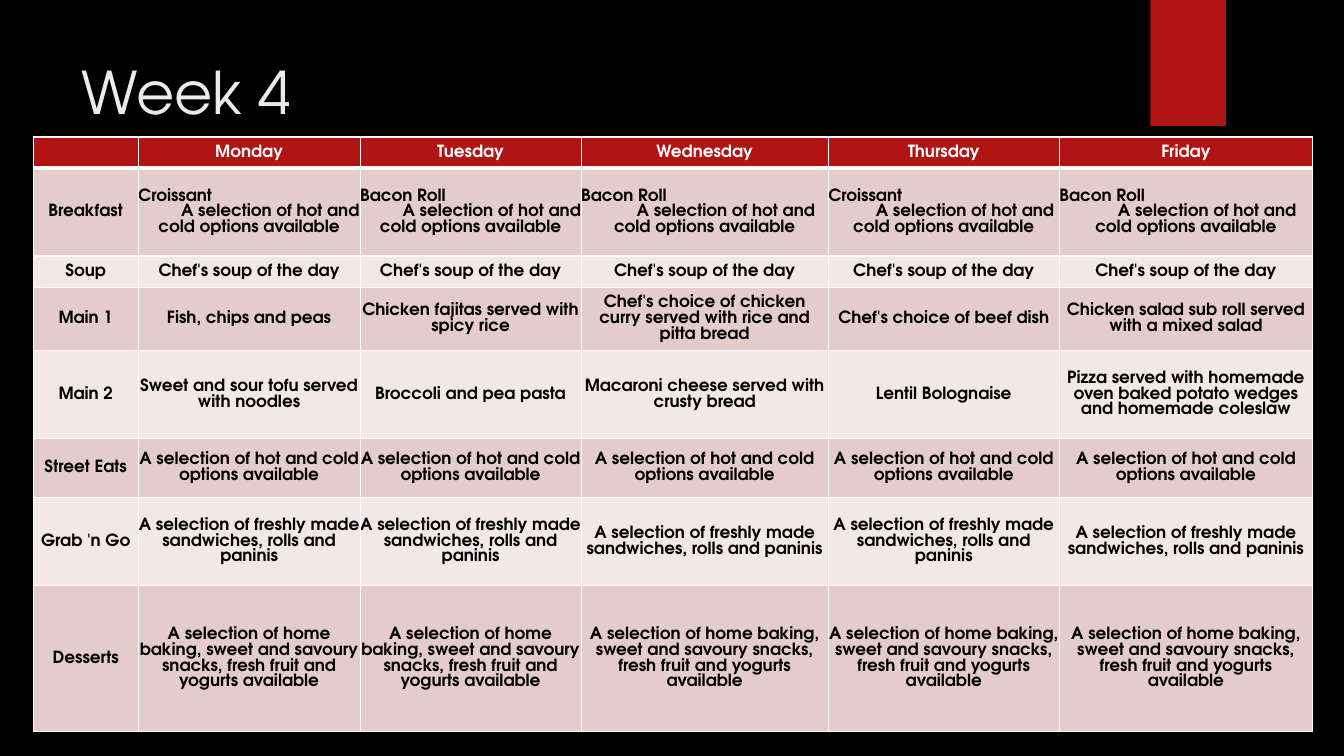
from dataclasses import dataclass

from lxml import etree
from pptx import Presentation
from pptx.dml.color import RGBColor
from pptx.enum.shapes import MSO_SHAPE
from pptx.enum.text import MSO_ANCHOR, PP_ALIGN
from pptx.oxml.ns import qn
from pptx.util import Inches, Pt

RECTANGLE = MSO_SHAPE.RECTANGLE
LEFT, CENTER = PP_ALIGN.LEFT, PP_ALIGN.CENTER
TOP, MIDDLE = MSO_ANCHOR.TOP, MSO_ANCHOR.MIDDLE


@dataclass(frozen=True)
class Theme:
    background: str = "000000"
    accent: str = "B01513"
    title: str = "EBEBEB"
    light: str = "FFFFFF"
    dark: str = "000000"
    bands: tuple = ("E4CCCC", "F2E8E7")
    font: str = "TeX Gyre Adventor"
    title_size: float = 42
    title_leading: float = 51
    table_size: float = 12
    table_leading: float = 11.2
    rule: float = 1
    header_rule: float = 3


THEME = Theme()
SLIDE_WIDTH, SLIDE_HEIGHT = 13.33, 7.5
TITLE_BOX = (0.71, 0.5, 10.29, 1.53)
TAB_BOX = (11.41, 0, 0.75, 1.25)
MENU_BOX = (0.33, 1.36, 12.69, 5.9)
COLUMN_WIDTHS = (1.04, 2.2, 2.19, 2.45, 2.29, 2.51)
ROW_HEIGHTS = (0.31, 0.87, 0.31, 0.63, 0.87, 0.59, 0.87, 1.45)
BREAKFAST_INDENT = 0.42

DAYS = ("Monday", "Tuesday", "Wednesday", "Thursday", "Friday")
HOT_AND_COLD = "A selection of hot and cold options available"
BREAKFASTS = ("Croissant", "Bacon Roll", "Bacon Roll", "Croissant", "Bacon Roll")
MENU = (
    ("", *DAYS),
    ("Breakfast", *((dish, HOT_AND_COLD) for dish in BREAKFASTS)),
    ("Soup", *["Chef's soup of the day"] * len(DAYS)),
    (
        "Main 1",
        "Fish, chips and peas",
        "Chicken fajitas served with spicy rice",
        "Chef's choice of chicken curry served with rice and pitta bread",
        "Chef's choice of beef dish",
        "Chicken salad sub roll served with a mixed salad",
    ),
    (
        "Main 2",
        "Sweet and sour tofu served with noodles",
        "Broccoli and pea pasta",
        "Macaroni cheese served with crusty bread",
        "Lentil Bolognaise",
        "Pizza served with homemade oven baked potato wedges and homemade coleslaw",
    ),
    ("Street Eats", *[HOT_AND_COLD] * len(DAYS)),
    ("Grab 'n Go", *["A selection of freshly made sandwiches, rolls and paninis"] * len(DAYS)),
    (
        "Desserts",
        *["A selection of home baking, sweet and savoury snacks, "
          "fresh fruit and yogurts available"] * len(DAYS),
    ),
)


def write_text(paragraph, text, *, size, leading, color, bold=False, align=LEFT, indent=0):
    if indent:
        paragraph._p.get_or_add_pPr().set("indent", str(Inches(indent)))
    paragraph.alignment = align
    paragraph.line_spacing = Pt(leading)
    paragraph.font.size = Pt(size)
    run = paragraph.add_run()
    run.text = text
    run.font.name = THEME.font
    run.font.size = Pt(size)
    run.font.bold = bold
    run.font.color.rgb = RGBColor.from_string(color)


def set_borders(cell, widths):
    properties = cell._tc.get_or_add_tcPr()
    for position, (side, width) in enumerate(widths.items()):
        line = etree.Element(qn(f"a:ln{side}"), w=str(Pt(width)))
        fill = etree.SubElement(line, qn("a:solidFill"))
        etree.SubElement(fill, qn("a:srgbClr"), val=THEME.light)
        properties.insert(position, line)


def fill_cell(cell, content, row):
    is_header = row == 0
    cell.margin_left = cell.margin_right = cell.margin_top = cell.margin_bottom = 0
    cell.vertical_anchor = MIDDLE
    cell.fill.solid()
    color = THEME.accent if is_header else THEME.bands[(row - 1) % 2]
    cell.fill.fore_color.rgb = RGBColor.from_string(color)
    set_borders(cell, {
        "L": THEME.rule,
        "R": THEME.rule,
        "T": THEME.header_rule if row == 1 else THEME.rule,
        "B": THEME.header_rule if is_header else THEME.rule,
    })
    style = dict(size=THEME.table_size, leading=THEME.table_leading, bold=True,
                 color=THEME.light if is_header else THEME.dark)
    frame = cell.text_frame
    if isinstance(content, tuple):
        dish, options = content
        write_text(frame.paragraphs[0], dish, **style)
        write_text(frame.add_paragraph(), options, align=CENTER,
                   indent=BREAKFAST_INDENT, **style)
    elif content:
        write_text(frame.paragraphs[0], content, align=CENTER, **style)
    else:
        frame.paragraphs[0].font.size = Pt(THEME.table_size)


def add_menu(slide, box):
    table = slide.shapes.add_table(len(MENU), len(MENU[0]), *map(Inches, box)).table
    table.horz_banding = False
    for column, width in zip(table.columns, COLUMN_WIDTHS):
        column.width = Inches(box[2] * width / sum(COLUMN_WIDTHS))
    for row, height in zip(table.rows, ROW_HEIGHTS):
        row.height = Inches(box[3] * height / sum(ROW_HEIGHTS))
    for row, contents in enumerate(MENU):
        for column, content in enumerate(contents):
            fill_cell(table.cell(row, column), content, row)


def add_title(slide, box):
    frame = slide.shapes.add_textbox(*map(Inches, box)).text_frame
    frame.word_wrap = True
    frame.vertical_anchor = TOP
    write_text(frame.paragraphs[0], "Week 4", size=THEME.title_size,
               leading=THEME.title_leading, color=THEME.title)


def add_tab(slide, box):
    tab = slide.shapes.add_shape(RECTANGLE, *map(Inches, box))
    tab.shadow.inherit = False
    tab.fill.solid()
    tab.fill.fore_color.rgb = RGBColor.from_string(THEME.accent)
    tab.line.fill.background()


def build_menu_slide(presentation):
    slide = presentation.slides.add_slide(presentation.slide_layouts[6])
    slide.background.fill.solid()
    slide.background.fill.fore_color.rgb = RGBColor.from_string(THEME.background)
    add_tab(slide, TAB_BOX)
    add_title(slide, TITLE_BOX)
    add_menu(slide, MENU_BOX)


def main():
    presentation = Presentation()
    presentation.slide_width = Inches(SLIDE_WIDTH)
    presentation.slide_height = Inches(SLIDE_HEIGHT)
    build_menu_slide(presentation)
    presentation.save("out.pptx")


if __name__ == "__main__":
    main()
